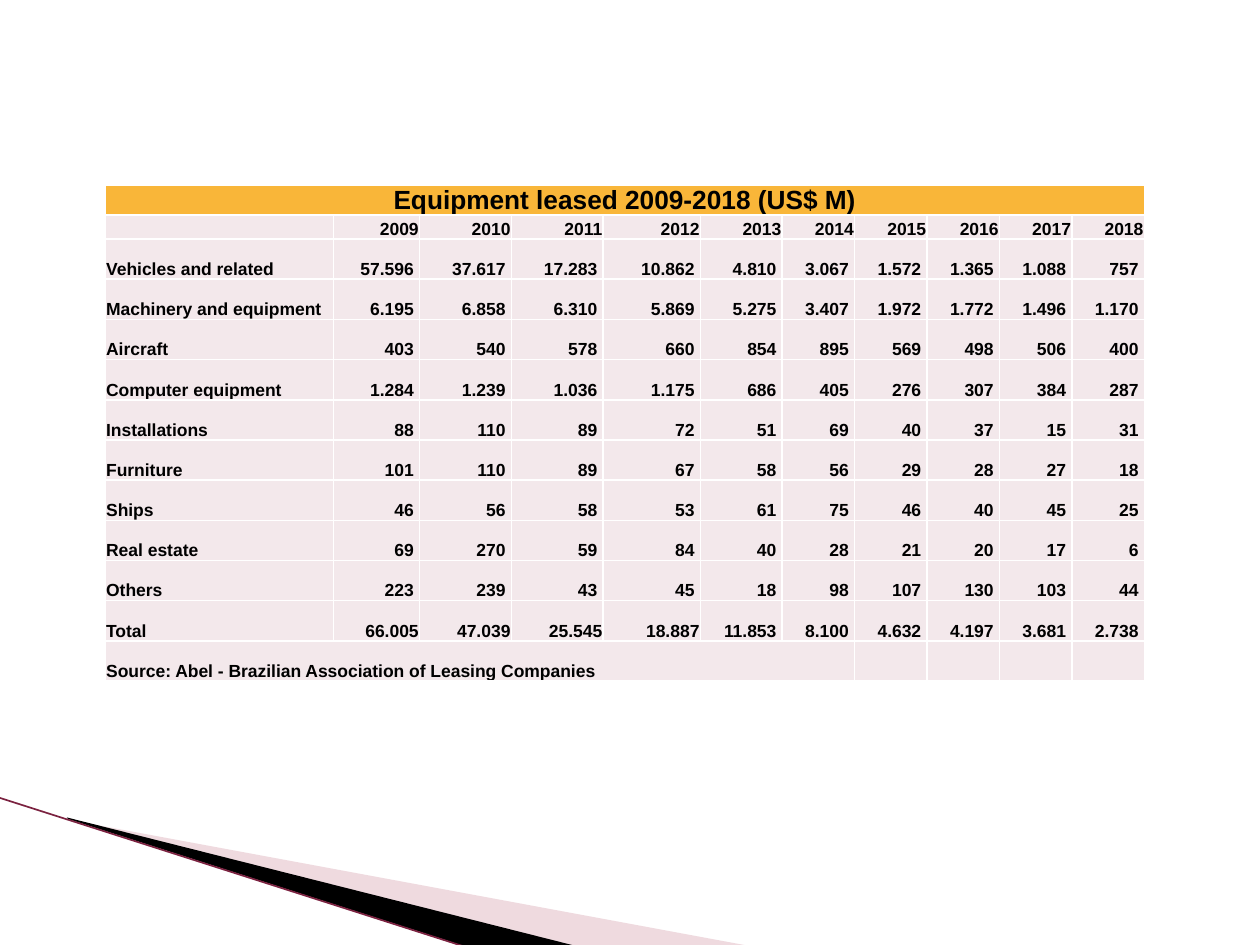
"""Build a slide with a table of equipment leased in Brazil from 2009 to 2018."""
from dataclasses import dataclass

from lxml.etree import SubElement
from pptx import Presentation
from pptx.dml.color import RGBColor
from pptx.enum.shapes import MSO_CONNECTOR
from pptx.enum.text import MSO_ANCHOR, PP_ALIGN
from pptx.oxml.ns import qn
from pptx.slide import Slide
from pptx.table import Table, _Cell
from pptx.util import Cm, Pt

COLORS = {
    "text": "000000",
    "heading": "F9B639",
    "body": "F3E8EB",
    "border": "FFFFFF",
    "pale_wedge": "D8A3AF",
    "dark_wedge": "000000",
    "edge": "7B2240",
}
COLUMN_WIDTHS = [4.6, 1.74, 1.85, 1.85, 1.96, 1.65] + [1.46] * 5
HEADING_HEIGHT, YEAR_HEIGHT, ENTRY_HEIGHT = 0.6, 0.48, 0.81
TIGHT, PADDED = 0.02, 0.12
FIRST_PADDED_TOTAL = 5


@dataclass(frozen=True)
class Category:
    name: str
    amounts: str


@dataclass(frozen=True)
class Wedge:
    points: tuple[tuple[float, float], ...]
    color: str
    opacity: int


CATEGORIES = [
    Category("Vehicles and related", "57.596 37.617 17.283 10.862 4.810 3.067 1.572 1.365 1.088 757"),
    Category("Machinery and equipment", "6.195 6.858 6.310 5.869 5.275 3.407 1.972 1.772 1.496 1.170"),
    Category("Aircraft", "403 540 578 660 854 895 569 498 506 400"),
    Category("Computer equipment", "1.284 1.239 1.036 1.175 686 405 276 307 384 287"),
    Category("Installations", "88 110 89 72 51 69 40 37 15 31"),
    Category("Furniture", "101 110 89 67 58 56 29 28 27 18"),
    Category("Ships", "46 56 58 53 61 75 46 40 45 25"),
    Category("Real estate", "69 270 59 84 40 28 21 20 17 6"),
    Category("Others", "223 239 43 45 18 98 107 130 103 44"),
    Category("Total", "66.005 47.039 25.545 18.887 11.853 8.100 4.632 4.197 3.681 2.738"),
]
WEDGES = [
    Wedge(((1.4, 16.53), (15.11, 19.07), (11.58, 19.07), (1.4, 16.51)), "pale_wedge", 40),
    Wedge(((1.35, 16.48), (11.61, 19.07), (9.45, 19.1), (1.37, 16.51)), "dark_wedge", 100),
]


def color(name: str) -> RGBColor:
    return RGBColor.from_string(COLORS[name])


def draw_wedge(slide: Slide, wedge: Wedge) -> None:
    start, *others = [(Cm(x), Cm(y)) for x, y in wedge.points]
    builder = slide.shapes.build_freeform(*start)
    builder.add_line_segments(others)
    outline = builder.convert_to_shape()
    outline.shadow.inherit = False
    outline.line.fill.background()
    outline.fill.solid()
    outline.fill.fore_color.rgb = color(wedge.color)
    if wedge.opacity < 100:
        tint = next(outline._element.spPr.iter(qn("a:srgbClr")))
        SubElement(tint, qn("a:alpha"), val=str(wedge.opacity * 1000))


def draw_edge(slide: Slide) -> None:
    edge = slide.shapes.add_connector(
        MSO_CONNECTOR.STRAIGHT, Cm(-0.02), Cm(16.08), Cm(9.42), Cm(19.1)
    )
    edge.line.color.rgb = color("edge")
    edge.line.width = Pt(0.95)
    SubElement(edge._element.spPr, qn("a:effectLst"))


def format_cell(cell: _Cell, fill: str) -> None:
    cell.vertical_anchor = MSO_ANCHOR.BOTTOM
    cell.margin_left = cell.margin_right = Cm(TIGHT)
    cell.margin_top, cell.margin_bottom = Cm(TIGHT), 0
    properties = cell._tc.get_or_add_tcPr()
    for side in ("lnL", "lnR", "lnT", "lnB"):
        border = SubElement(properties, qn(f"a:{side}"), w=str(Pt(1)))
        solid = SubElement(border, qn("a:solidFill"))
        SubElement(solid, qn("a:srgbClr"), val=COLORS["border"])
    cell.fill.solid()
    cell.fill.fore_color.rgb = color(fill)
    cell.text_frame.paragraphs[0].font.size = Pt(10)


def write(cell: _Cell, text: str, align: PP_ALIGN, size: int = 10, right: float = TIGHT) -> None:
    cell.margin_right = Cm(right)
    paragraph = cell.text_frame.paragraphs[0]
    paragraph.alignment = align
    run = paragraph.add_run()
    run.text = text
    run.font.name = "Arial"
    run.font.size = Pt(size)
    run.font.bold = True
    run.font.color.rgb = color("text")


def fill_category(table: Table, row: int, category: Category) -> None:
    write(table.cell(row, 0), category.name, PP_ALIGN.LEFT)
    for column, amount in enumerate(category.amounts.split(), start=1):
        tight = category.name == "Total" and column < FIRST_PADDED_TOTAL
        write(table.cell(row, column), amount, PP_ALIGN.RIGHT, right=TIGHT if tight else PADDED)


def draw_table(slide: Slide) -> None:
    heights = [HEADING_HEIGHT, YEAR_HEIGHT] + [ENTRY_HEIGHT] * (len(CATEGORIES) + 1)
    table = slide.shapes.add_table(
        len(heights), len(COLUMN_WIDTHS), Cm(2.12), Cm(3.73), Cm(sum(COLUMN_WIDTHS)), Cm(sum(heights))
    ).table
    table.first_row = table.horz_banding = False
    for column, width in zip(table.columns, COLUMN_WIDTHS):
        column.width = Cm(width)
    for index, (row, height) in enumerate(zip(table.rows, heights)):
        row.height = Cm(height)
        for cell in row.cells:
            format_cell(cell, "body" if index else "heading")

    heading = table.cell(0, 0)
    heading.merge(table.cell(0, len(COLUMN_WIDTHS) - 1))
    write(heading, "Equipment leased 2009-2018 (US$ M)", PP_ALIGN.CENTER, size=15)
    for column, year in enumerate(range(2009, 2019), start=1):
        write(table.cell(1, column), str(year), PP_ALIGN.RIGHT)
    for row, category in enumerate(CATEGORIES, start=2):
        fill_category(table, row, category)
    last = len(heights) - 1
    source = table.cell(last, 0)
    source.merge(table.cell(last, 6))
    write(source, "Source: Abel - Brazilian Association of Leasing Companies", PP_ALIGN.LEFT)


def main() -> None:
    presentation = Presentation()
    presentation.slide_width, presentation.slide_height = Cm(25.4), Cm(19.05)
    slide = presentation.slides.add_slide(presentation.slide_layouts[6])
    for wedge in WEDGES:
        draw_wedge(slide, wedge)
    draw_edge(slide)
    draw_table(slide)
    presentation.save("out.pptx")


if __name__ == "__main__":
    main()
